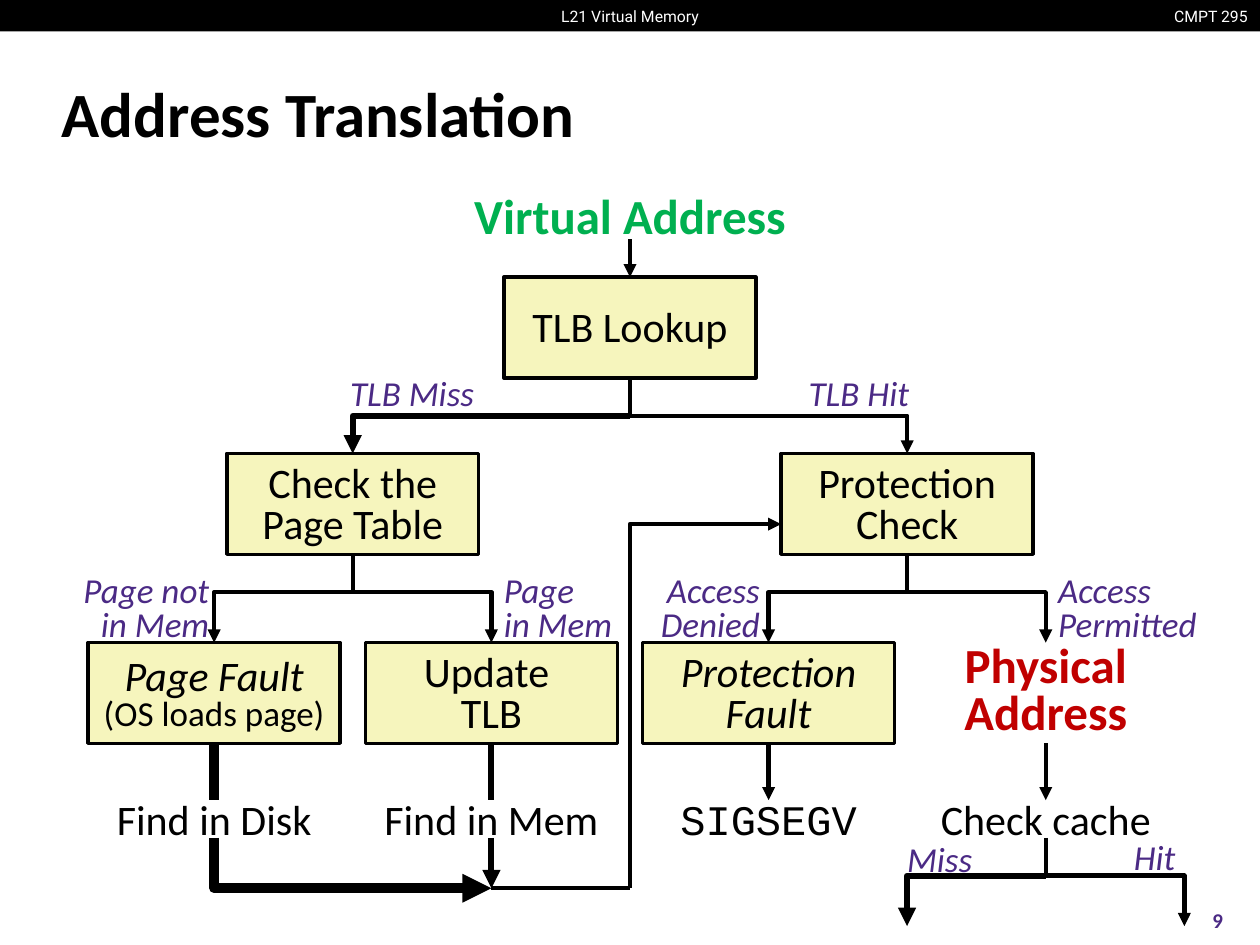
from lxml import etree
from pptx import Presentation
from pptx.dml.color import RGBColor
from pptx.enum.shapes import MSO_CONNECTOR, MSO_SHAPE
from pptx.enum.text import MSO_ANCHOR, PP_ALIGN
from pptx.oxml.ns import qn
from pptx.util import Inches, Pt

LEFT, CENTER, RIGHT = PP_ALIGN.LEFT, PP_ALIGN.CENTER, PP_ALIGN.RIGHT
TOP, MIDDLE = MSO_ANCHOR.TOP, MSO_ANCHOR.MIDDLE
STRAIGHT, ELBOW = MSO_CONNECTOR.STRAIGHT, MSO_CONNECTOR.ELBOW
RECT = MSO_SHAPE.RECTANGLE

COLORS = {
    "black": "000000", "white": "FFFFFF", "box": "F6F5BD",
    "label": "4B2A85", "virtual": "00B050", "physical": "C00000",
}
BOX_W, BOX_H = 2, 0.8
PITCH = 1.1  # distance between neighbouring columns
THIN, MEDIUM, THICK = 2.5, 3.5, 5.5  # line weight grows with access cost


def rgb(name):
    return RGBColor.from_string(COLORS[name])


def write(sp, lines, size, color="black", font="Calibri", bold=False, italic=False,
          align=CENTER, anchor=TOP, spacing=None, margins=(0.1, 0.05, 0.1, 0.05),
          wrap=False):
    """Fill a shape with lines; a line is text or (text, size, italic)."""
    tf = sp.text_frame
    tf.word_wrap, tf.vertical_anchor = wrap, anchor
    tf.margin_left, tf.margin_top, tf.margin_right, tf.margin_bottom = map(Inches, margins)
    for i, line in enumerate(lines):
        text, pt, slanted = (line, size, italic) if isinstance(line, str) else line
        p = tf.add_paragraph() if i else tf.paragraphs[0]
        p.alignment = align
        if spacing:
            p.line_spacing = spacing
        r = p.add_run()
        r.text = text
        r.font.name, r.font.size = font, Pt(pt)
        r.font.bold, r.font.italic = bold, slanted
        r.font.color.rgb = rgb(color)


def add_text(slide, x, y, w, h, lines, size, **style):
    sp = slide.shapes.add_textbox(Inches(x), Inches(y), Inches(w), Inches(h))
    write(sp, lines, size, **style)


def add_label(slide, x, y, w, lines, align=LEFT):
    """Branch condition in italics."""
    two = len(lines) > 1
    add_text(slide, x, y, w, 0.64 if two else 0.43, lines, 20, color="label",
             italic=True, align=align, spacing=0.8 if two else None)


def add_box(slide, cx, y, lines, italic=False):
    """Step box centred on a column."""
    sp = slide.shapes.add_shape(RECT, Inches(cx - BOX_W / 2), Inches(y),
                                Inches(BOX_W), Inches(BOX_H))
    sp.shadow.inherit = False
    sp.fill.solid()
    sp.fill.fore_color.rgb = rgb("box")
    sp.line.color.rgb = rgb("black")
    sp.line.width = Pt(2)
    write(sp, lines, 24, italic=italic, anchor=MIDDLE, spacing=0.8,
          margins=(0, 0.05, 0, 0))


def add_line(slide, x1, y1, x2, y2, width=THIN, arrow=True, bend=None):
    """Straight line, or an elbow whose vertical leg lies at bend (0 start, 1 end)."""
    kind = STRAIGHT if bend is None else ELBOW
    cn = slide.shapes.add_connector(kind, Inches(x1), Inches(y1), Inches(x2), Inches(y2))
    cn.line.color.rgb = rgb("black")
    cn.line.width = Pt(width)
    sp_pr = cn._element.spPr
    if arrow:
        etree.SubElement(sp_pr.find(qn("a:ln")), qn("a:tailEnd"), type="triangle")
    etree.SubElement(sp_pr, qn("a:effectLst"))
    if bend is not None:
        av = sp_pr.find(qn("a:prstGeom")).find(qn("a:avLst"))
        etree.SubElement(av, qn("a:gd"), name="adj1", fmla=f"val {bend * 100000}")


def add_fork(slide, cx, y, span, drop, left_width=THIN):
    """Stem that splits into a left and a right arrow."""
    split = y + 0.3
    add_line(slide, cx, y, cx, split, arrow=False)
    for side, width in ((1, THIN), (-1, left_width)):
        add_line(slide, cx, split, cx + side * span, split + drop, width, bend=1)


def add_header(slide, x, y, w, h):
    bar = slide.shapes.add_shape(RECT, Inches(x), Inches(y), Inches(w), Inches(h))
    bar.shadow.inherit = False
    bar.fill.solid()
    bar.fill.fore_color.rgb = rgb("black")
    bar.line.fill.background()
    style = {"font": "Roboto", "color": "white", "anchor": MIDDLE}
    add_text(slide, x + w - 0.81, y, 0.81, h, ["CMPT 295"], 9, align=RIGHT, **style)
    add_text(slide, x + (w - 1.3) / 2, y, 1.3, h, ["L21 Virtual Memory"], 9, **style)


def add_title(slide, x, y, w, h):
    title = slide.shapes.title
    title.left, title.top, title.width, title.height = map(Inches, (x, y, w, h))
    write(title, ["Address Translation"], 36, bold=True, align=LEFT, anchor=MIDDLE, wrap=True)
    p_pr = title.text_frame.paragraphs[0]._p.get_or_add_pPr()
    p_pr.set("marL", str(Inches(0.13)))
    p_pr.set("indent", str(-Inches(0.13)))


def add_flowchart(slide, x, y, w):
    """Decision tree on eight columns, the first one PITCH from the left edge."""
    cols = [x + PITCH * (i + 1) for i in range(8)]
    mid = x + w / 2
    lookup, check, result, outcome = y + 0.73, y + 2.13, y + 3.63, y + 4.78
    bottom = result + BOX_H
    join = outcome + 0.8

    # Lookup
    add_text(slide, mid - 1.35, y, 2.7, 0.47, ["Virtual Address"], 28, color="virtual",
             bold=True, margins=(0.1, 0, 0.1, 0))
    add_line(slide, mid, lookup - 0.3, mid, lookup)
    add_box(slide, mid, lookup, ["TLB Lookup"])
    add_fork(slide, mid, lookup + BOX_H, 2 * PITCH, 0.3, MEDIUM)

    # Checks
    checks = ((cols[1], ["Check the", "Page Table"]), (cols[5], ["Protection", "Check"]))
    for cx, lines in checks:
        add_box(slide, cx, check, lines)
        add_fork(slide, cx, check + BOX_H, PITCH, 0.4)

    # Results
    add_box(slide, cols[0], result, [("Page Fault", 24, True), ("(OS loads page)", 20, False)])
    add_box(slide, cols[2], result, ["Update ", "TLB"])
    add_box(slide, cols[4], result, ["Protection", "Fault"], italic=True)
    add_text(slide, cols[6] - BOX_W / 2, result, BOX_W, BOX_H, ["Physical", "Address"], 28,
             color="physical", bold=True, anchor=MIDDLE, spacing=0.8, margins=(0, 0, 0, 0))

    # Outcomes
    outcomes = (
        (cols[0], "Find in Disk", "Calibri", THICK, False),
        (cols[2], "Find in Mem", "Calibri", MEDIUM, False),
        (cols[4], "SIGSEGV", "Courier New", THIN, True),
        (cols[6], "Check cache", "Calibri", THIN, True),
    )
    for cx, text, font, width, arrow in outcomes:
        add_line(slide, cx, bottom, cx, outcome + 0.1, width, arrow)
        add_text(slide, cx - BOX_W / 2, outcome, BOX_W, 0.5, [text], 24, font=font)
    add_fork(slide, cols[6], outcome + 0.4, PITCH, 0.4, MEDIUM)

    # Way back to the protection check
    add_line(slide, cols[2], join - 0.4, cols[2], join, MEDIUM)
    add_line(slide, cols[0], join - 0.4, cols[2], join, THICK, bend=0)
    add_line(slide, cols[2], join, mid, join, arrow=False)
    add_line(slide, mid, join, cols[5] - BOX_W / 2, check + 0.56, bend=0)

    # Branch conditions
    above_check, above_result = check - 0.7, result - 0.57
    add_label(slide, cols[1] - 0.12, above_check, 1.2, ["TLB Miss"])
    add_label(slide, cols[5] - 0.88, above_check, 1, ["TLB Hit"])
    add_label(slide, cols[0] - 1.15, above_result, 1.21, ["Page not", "in Mem"], RIGHT)
    add_label(slide, cols[2], above_result, 1.08, ["Page", "in Mem"])
    add_label(slide, cols[4] - 1, above_result, 1.03, ["Access", "Denied"], RIGHT)
    add_label(slide, cols[6], above_result, 1.34, ["Access", "Permitted"])
    add_label(slide, cols[5] - 0.1, outcome + 0.35, 0.72, ["Miss"])
    add_label(slide, cols[7] - 0.5, outcome + 0.33, 0.53, ["Hit"])


def main():
    prs = Presentation()
    prs.slide_width, prs.slide_height = Inches(10), Inches(7.5)
    slide = prs.slides.add_slide(prs.slide_layouts[5])
    add_header(slide, 0, 0, 10, 0.25)
    add_title(slide, 0.39, 0.48, 9.19, 0.83)
    add_flowchart(slide, 0.6, 1.47, 8.8)
    # Page number
    add_text(slide, 9.33, 7.1, 0.67, 0.4, ["9"], 12, color="label", bold=True, anchor=MIDDLE)
    prs.save("out.pptx")


if __name__ == "__main__":
    main()
